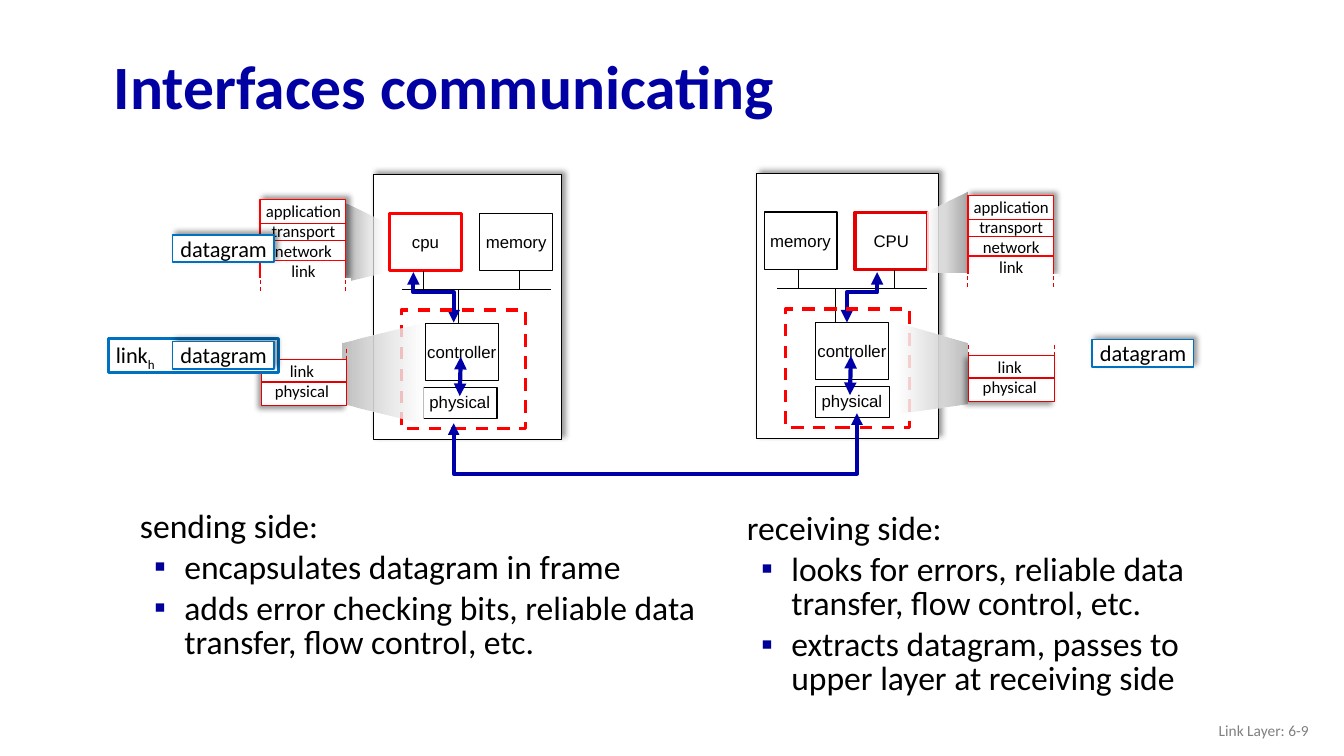
from lxml.etree import SubElement
from pptx import Presentation
from pptx.dml.color import RGBColor as RGB
from pptx.enum.dml import MSO_LINE
from pptx.enum.shapes import MSO_CONNECTOR as CONN, MSO_SHAPE as SHAPE
from pptx.enum.text import MSO_ANCHOR as ANCHOR, PP_ALIGN as ALIGN
from pptx.oxml.ns import qn
from pptx.util import Inches, Pt

CELL = Inches(0.1)  # the slide is a grid of 133.3 columns by 75 rows
C = {"black": "000000", "white": "FFFFFF", "title": "0000A3", "arrow": "0000A8",
     "red": "FF0000", "dark_red": "E40000", "blue": "0070C0", "bullet": "000099",
     "gray": "808080", "zoom_low": "BFBFBF", "zoom_high": "A6A6A6"}
UP_RIGHT, DOWN_LEFT = 315, 135


def cells(*values):
    return [round(v * CELL) for v in values]


def rgb(name):
    return RGB.from_string(C[name])


def write(tf, lines, size=12, font="Arial", color="black", bold=False, align=ALIGN.CENTER,
          anchor=ANCHOR.TOP, wrap=False, spacing=None, before=0, bullets=False):
    """Each line is a string or a (text, subscript) pair; bullets skip the first line."""
    tf.word_wrap, tf.vertical_anchor = wrap, anchor
    for i, line in enumerate(lines):
        p = tf.paragraphs[0] if i == 0 else tf.add_paragraph()
        p.alignment, p.space_before = align, Pt(before)
        if spacing:
            p.line_spacing = spacing
        if bullets and i:
            pPr = p._p.get_or_add_pPr()
            pPr.set("marL", str(Inches(0.44)))
            pPr.set("indent", str(Inches(-0.3)))
            SubElement(SubElement(pPr, qn("a:buClr")), qn("a:srgbClr"), val=C["bullet"])
            SubElement(pPr, qn("a:buFont"), typeface="Arial")
            SubElement(pPr, qn("a:buChar"), char="▪")
        for j, text in enumerate([line] if isinstance(line, str) else line):
            r = p.add_run()
            r.text = text
            r.font.size, r.font.name, r.font.bold = Pt(size), font, bold
            r.font.color.rgb = rgb(color)
            if j:
                r._r.get_or_add_rPr().set("baseline", "-25000")


def label(s, x, y, w, h, lines, **fmt):
    write(s.shapes.add_textbox(*cells(x, y, w, h)).text_frame, lines, **fmt)


def style_line(line, color, width, dash=False, arrows=False):
    line.color.rgb, line.width = rgb(color), Pt(width)
    if dash:
        line.dash_style = MSO_LINE.DASH
    if arrows:
        for end in ("a:headEnd", "a:tailEnd"):
            SubElement(line._get_or_add_ln(), qn(end), type="triangle")


def box(s, x, y, w, h, text=None, line="black", width=0.75, fill="white",
        dash=False, shadow=None):
    """shadow is the direction of the shadow in degrees."""
    sp = s.shapes.add_shape(SHAPE.RECTANGLE, *cells(x, y, w, h))
    if fill:
        sp.fill.solid()
        sp.fill.fore_color.rgb = rgb(fill)
    else:
        sp.fill.background()
    if line:
        style_line(sp.line, line, width, dash)
    else:
        sp.line.fill.background()
    sp.shadow.inherit = False
    if shadow is not None:
        effects = sp.element.spPr.find(qn("a:effectLst"))
        outer = SubElement(effects, qn("a:outerShdw"), blurRad=str(Pt(4)), dist=str(Pt(3)),
                           dir=str(shadow * 60000), algn="ctr", rotWithShape="0")
        clr = SubElement(outer, qn("a:srgbClr"), val=C["black"])
        SubElement(clr, qn("a:alpha"), val="40000")
    if text:
        write(sp.text_frame, [text], anchor=ANCHOR.MIDDLE)


def rule(s, x1, y1, x2, y2, color="black", width=0.75, **style):
    cn = s.shapes.add_connector(CONN.STRAIGHT, *cells(x1, y1, x2, y2))
    style_line(cn.line, color, width, **style)
    SubElement(cn.element.spPr, qn("a:effectLst"))


def outline(s, points, close):
    (x, y), *rest = points
    fb = s.shapes.build_freeform(x, y, scale=CELL)
    fb.add_line_segments(rest, close=close)
    sp = fb.convert_to_shape()
    sp.shadow.inherit = False
    return sp


def bent_arrow(s, points, width=3):
    sp = outline(s, points, close=False)
    sp.fill.background()
    style_line(sp.line, "arrow", width, arrows=True)


def zoom(s, points, color, alpha, mirrored):
    """Wedge that fades from the layer stack towards the host."""
    sp = outline(s, points, close=True)
    sp.line.fill.background()
    sp.fill.gradient()
    sp.fill.gradient_angle = 0
    solid, faded = list(sp.fill.gradient_stops)[::-1 if mirrored else 1]
    solid.color.rgb, faded.color.rgb = rgb(color), rgb("white")
    for clr in sp.element.spPr.iter(qn("a:srgbClr")):
        if clr.get("val") == C["white"]:
            SubElement(clr, qn("a:alpha"), val=str(alpha * 1000))


def host(s, x, y, w, bus, chips, nic, controller, physical, drop, bend):
    """chips lists (text, line colour, line width) for the two slots above the bus."""
    box(s, x, y, w, 26.3, shadow=UP_RIGHT)
    box(s, x + physical, y + 21.1, 7.3, 3.1)
    box(s, x + controller, y + 14.8, 7.2, 5.7, "controller")
    label(s, x + physical - 0.45, y + 21.05, 8.1, 5, ["physical"])
    b = x + bus
    rule(s, b, y + 11.4, b + 14.8, y + 11.4)
    rule(s, x + drop, y + 14.7, x + drop, y + 11.4)
    for i, (text, line, width) in enumerate(chips):
        box(s, b - 1.3 + 9 * i, y + 3.85, 7.2, 5.7, text, line, width)
        stub = b + 2.1 + 9.5 * i
        rule(s, stub, y + 11.4, stub, y + 9.6)
    x1, x2 = (x + v for v in bend)
    bent_arrow(s, [(x1, y + 9.6), (x1, y + 12), (x2, y + 12), (x2, y + 14.6)])
    arrow = x + controller + 3.5
    rule(s, arrow, y + 18.1, arrow - 0.1, y + 22, "arrow", 3, arrows=True)
    box(s, x + nic, y + 13.45, 12.3, 11.8, line="red", width=2.25, fill=None, dash=True)


def layer_stack(s, x, y, mirrored, low_reach, high_reach, alphas, low_dashes):
    """Upper and lower protocol layers, with wedges reaching towards the host."""
    w = 8.5
    edge, way = (x, -1) if mirrored else (x + w, 1)
    low, high = edge + way * low_reach, edge + way * high_reach
    zoom(s, [(low, y + 12.6), (edge, y + 14.7), (edge, y + 20.5), (low, y + 21.9)],
         "zoom_low", alphas[0], mirrored)
    box(s, x + 0.1, y + 15.9, w, 4.5, line="dark_red", shadow=DOWN_LEFT)
    zoom(s, [(high, y + 1.9), (edge, y), (edge, y + 7.8), (high, y + 7.2)],
         "zoom_high", alphas[1], mirrored)
    box(s, x, y, w, 8, line="red", width=1, shadow=UP_RIGHT)
    label(s, x - 0.5, y - 0.4, 9.6, 9.1, ["application", "transport", "network", "link"],
          font="Calibri")
    for row, color in ((2.35, "dark_red"), (4.1, "dark_red"), (6, "red")):
        rule(s, x, y + row, x + w, y + row, color)
    box(s, x - 0.6, y + 7.8, 9.6, 2, line=None)
    for side in (x, x + w):
        rule(s, side, y + 8, side, y + 9.1, "dark_red", dash=True)
    label(s, x + 0.4, y + 15.5, 7.5, 5.1, ["link", "physical"], font="Calibri")
    rule(s, x + 0.1, y + 18.1, x + w, y + 18.1, "dark_red")
    for column in low_dashes:
        side = x + column
        rule(s, side, y + 14.8, side, y + 15.9, "dark_red", dash=True)


def datagram(s, x, y):
    box(s, x, y, 10.1, 2.7, line="blue", width=1, shadow=UP_RIGHT)
    label(s, x - 0.2, y - 0.5, 11.5, 3.7, ["datagram"], size=16, font="Calibri",
          align=ALIGN.LEFT, wrap=True)


def frame(s, x, y):
    box(s, x, y, 16.8, 3.4, line="blue", width=2)
    label(s, x - 0.3, y - 0.2, 6.7, 3.7, [("link", "h")], size=16, font="Calibri",
          align=ALIGN.LEFT, wrap=True)
    datagram(s, x + 6.3, y + 0.3)


def side_notes(s, x, y, w, h, lines):
    label(s, x, y, w, h, lines, size=24, font="Calibri", align=ALIGN.LEFT, wrap=True,
          spacing=0.85, before=4.8, bullets=True)


def interfaces_slide(prs):
    s = prs.slides.add_slide(prs.slide_layouts[6])
    label(s, 10.3, 4, 115, 9.8, ["Interfaces communicating"], size=44, font="Calibri",
          color="title", bold=True, align=ALIGN.LEFT, anchor=ANCHOR.MIDDLE, wrap=True,
          spacing=0.9)
    host(s, 75, 17.2, 18.1, bus=2.1, nic=2.9, controller=5.9, physical=5.9, drop=7.9,
         bend=(12.4, 9.2), chips=[("memory", "black", 1), ("CPU", "dark_red", 2.25)])
    host(s, 37, 17.3, 18.7, bus=2.9, nic=2.8, controller=5.2, physical=5, drop=8.5,
         bend=(4.3, 7.9), chips=[("cpu", "red", 2.25), ("memory", "black", 0.75)])
    layer_stack(s, 25.8, 19.8, False, 7.3, 4.2, (74, 66), [8.6])
    layer_stack(s, 96, 19.4, True, 6.8, 4.5, (82, 81), [0.1, 8.6])
    bent_arrow(s, [(45.4, 41.5), (45.4, 47.1), (84.7, 47.1), (84.6, 41.4)], 2.75)
    side_notes(s, 12.9, 50.2, 57.4, 21.2, [
        "sending side:", "encapsulates datagram in frame",
        "adds error checking bits, reliable data transfer, flow control, etc."])
    side_notes(s, 73.1, 50.4, 52.8, 20.2, [
        "receiving side:", "looks for errors, reliable data transfer, flow control, etc.",
        "extracts datagram, passes to upper layer at receiving side"])
    frame(s, 10.8, 33.6)
    datagram(s, 17.1, 23.3)
    datagram(s, 108.3, 33.7)
    label(s, 100.8, 70.5, 30, 4, ["Link Layer: 6-9"], size=11, font="Calibri",
          color="gray", align=ALIGN.RIGHT, anchor=ANCHOR.MIDDLE, wrap=True)


def main():
    prs = Presentation()
    prs.slide_width, prs.slide_height = Inches(13.33), Inches(7.5)
    interfaces_slide(prs)
    prs.save("out.pptx")


if __name__ == "__main__":
    main()
